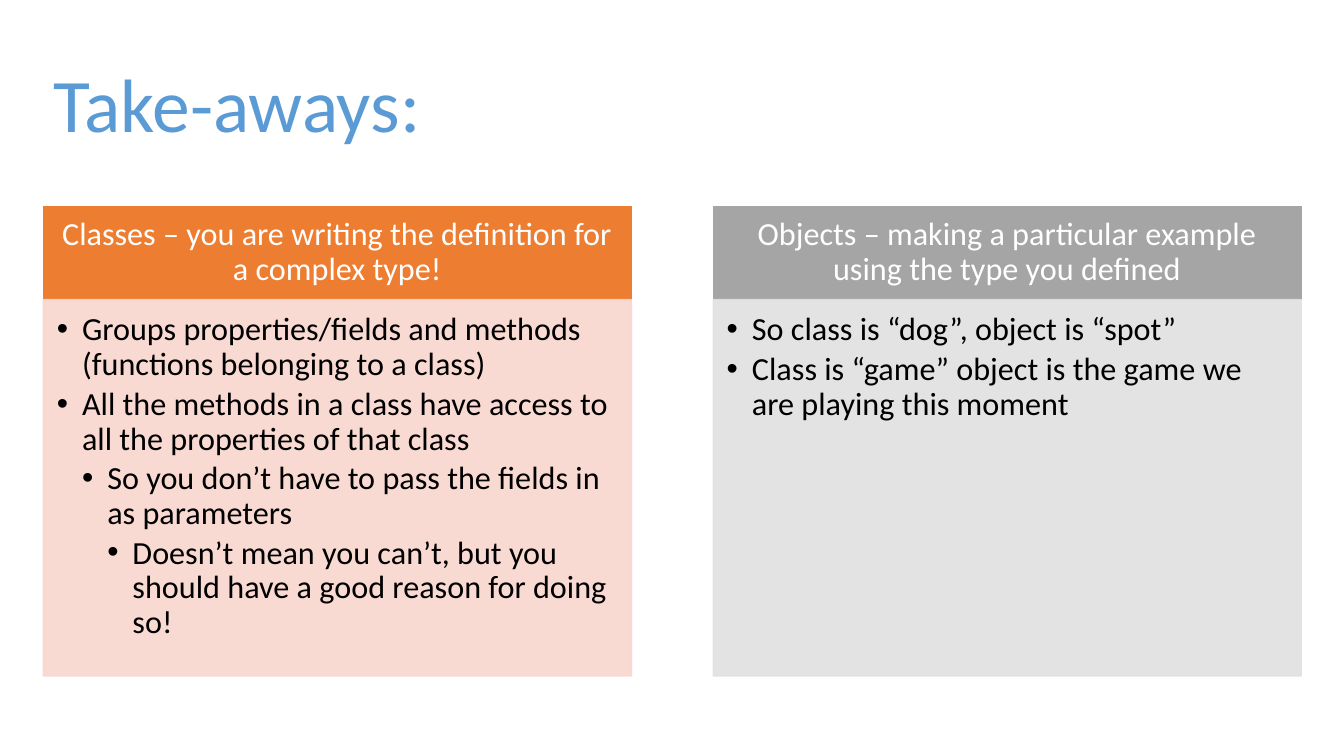
from lxml.etree import SubElement
from pptx import Presentation
from pptx.dml.color import RGBColor
from pptx.enum.text import MSO_ANCHOR, MSO_AUTO_SIZE, PP_ALIGN
from pptx.oxml.ns import qn
from pptx.util import Pt

COLORS = {
    "title": "5B9BD5", "white": "FFFFFF", "black": "000000",
    "classes": "ED7D31", "classes_tint": "F8D7CE",
    "objects": "A5A5A5", "objects_tint": "E1E1E1",
}
LEFT, COLUMN_WIDTH, COLUMN_STEP = 31, 420, 478.5
HEADING_TOP, HEADING_HEIGHT, LIST_HEIGHT = 147.3, 66.7, 268.8
INDENT = 18

COLUMNS = [
    ("classes", "Classes – you are writing the definition for a complex type!", [
        (0, "Groups properties/fields and methods (functions belonging to a class)"),
        (0, "All the methods in a class have access to all the properties of that class"),
        (1, "So you don’t have to pass the fields in as parameters"),
        (2, "Doesn’t mean you can’t, but you should have a good reason for doing so!"),
    ]),
    ("objects", "Objects – making a particular example using the type you defined", [
        (0, "So class is “dog”, object is “spot”"),
        (0, "Class is “game” object is the game we are playing this moment"),
    ]),
]


def prepare(box, place, anchor, insets, fill=None):
    """Place a placeholder, set up its text frame and colour its box."""
    box.left, box.top, box.width, box.height = (Pt(length) for length in place)
    frame = box.text_frame
    frame.word_wrap = True
    frame.auto_size = MSO_AUTO_SIZE.NONE
    frame.vertical_anchor = anchor
    (frame.margin_left, frame.margin_top,
     frame.margin_right, frame.margin_bottom) = (Pt(inset) for inset in insets)
    if fill:
        color = RGBColor.from_string(COLORS[fill])
        box.fill.solid()
        box.fill.fore_color.rgb = color
        box.line.color.rgb = color
        box.line.width = Pt(1)


def format_paragraph(paragraph, size, color, align, space_after):
    paragraph.alignment = align
    paragraph.line_spacing = 0.9
    paragraph.space_before = Pt(0)
    paragraph.space_after = Pt(space_after)
    for run in paragraph.runs:
        run.font.name = "Calibri"
        run.font.size = Pt(size)
        run.font.bold = False
        run.font.color.rgb = RGBColor.from_string(COLORS[color])


presentation = Presentation()
presentation.slide_width, presentation.slide_height = Pt(960), Pt(540)
slide = presentation.slides.add_slide(
    presentation.slide_layouts.get_by_name("Comparison"))

title = slide.shapes.title
prepare(title, (LEFT, 25.2, 898.6, 104.4), MSO_ANCHOR.MIDDLE, (7.2, 3.6, 7.2, 3.6))
title.text_frame.text = "Take-aways:"
format_paragraph(title.text_frame.paragraphs[0], 54, "title", PP_ALIGN.LEFT, 0)

for column, (topic, heading_text, points) in enumerate(COLUMNS):
    left = LEFT + column * COLUMN_STEP

    heading = slide.placeholders[1 + 2 * column]
    prepare(heading, (left, HEADING_TOP, COLUMN_WIDTH, HEADING_HEIGHT),
            MSO_ANCHOR.MIDDLE, (13, 7.2, 13, 7.2), topic)
    heading.text_frame.text = heading_text
    format_paragraph(heading.text_frame.paragraphs[0], 23, "white", PP_ALIGN.CENTER, 0)

    takeaways = slide.placeholders[2 + 2 * column]
    prepare(takeaways, (left, HEADING_TOP + HEADING_HEIGHT, COLUMN_WIDTH, LIST_HEIGHT),
            MSO_ANCHOR.TOP, (9.6, 9.6, 13, 14.4), topic + "_tint")
    for tint in takeaways.element.spPr.iter(qn("a:srgbClr")):
        SubElement(tint, qn("a:alpha"), val="90000")

    takeaways.text_frame.text = "\n".join(text for _, text in points)
    for paragraph, (level, _) in zip(takeaways.text_frame.paragraphs, points):
        paragraph.level = level
        format_paragraph(paragraph, 23, "black", PP_ALIGN.LEFT, 3.5)
        properties = paragraph._p.get_or_add_pPr()
        properties.set("marL", str(Pt(INDENT * (level + 1))))
        properties.set("indent", str(Pt(-INDENT)))
        SubElement(properties, qn("a:buFont"), typeface="Arial")
        SubElement(properties, qn("a:buChar"), char="•")

presentation.save("out.pptx")
